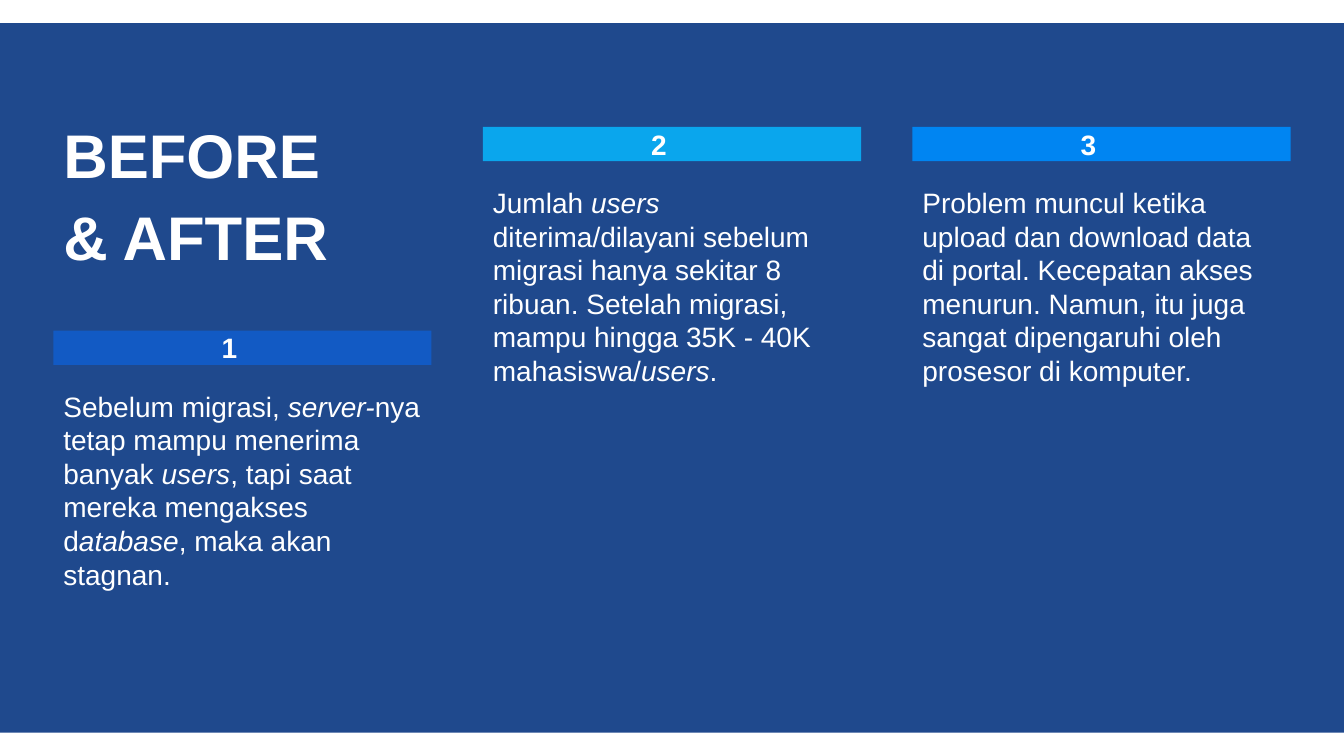
from lxml import etree
from pptx import Presentation
from pptx.dml.color import RGBColor
from pptx.enum import shapes, text
from pptx.oxml import ns
from pptx.util import Inches, Pt

COLORS = {
    "backdrop": "00307E",
    "first": "125AC4",
    "second": "0AA6ED",
    "third": "0085F2",
    "text": "FFFFFF",
}
COLUMN_LEFT = 0.53
COLUMN_STEP = 4.26
COLUMN_WIDTH = 3.75
COLUMNS = [
    ("first", 3.28, [
        ("Sebelum migrasi, ", False),
        ("server-", True),
        ("nya tetap mampu menerima banyak ", False),
        ("users", True),
        (", tapi saat mereka mengakses d", False),
        ("atabase", True),
        (", maka akan stagnan.", False),
    ]),
    ("second", 1.26, [
        ("Jumlah ", False),
        ("users ", True),
        ("diterima/dilayani sebelum migrasi hanya sekitar 8 ribuan. "
         "Setelah migrasi, mampu hingga 35K - 40K mahasiswa/", False),
        ("users", True),
        (".", False),
    ]),
    ("third", 1.26, [
        ("Problem muncul ketika upload dan download data di portal. "
         "Kecepatan akses menurun. Namun, itu juga sangat dipengaruhi "
         "oleh prosesor di komputer.", False),
    ]),
]


def add_bar(parent, left, top, width, height, color):
    """Add a plain filled rectangle."""
    bar = parent.add_shape(shapes.MSO_SHAPE.RECTANGLE, Inches(left),
                           Inches(top), Inches(width), Inches(height))
    bar.shadow.inherit = False
    bar.fill.solid()
    bar.fill.fore_color.rgb = RGBColor.from_string(COLORS[color])
    bar.line.fill.background()
    return bar


def set_opacity(bar, percent):
    """Make a solid fill partly transparent."""
    color = bar.fill._xPr.find(ns.qn("a:solidFill"))[0]
    etree.SubElement(color, ns.qn("a:alpha"), val=str(percent * 1000))


def add_text(parent, left, top, width, height, runs, size=20, bold=False,
             anchor=text.MSO_ANCHOR.TOP, align=text.PP_ALIGN.LEFT):
    """Add a wrapped text box of (wording, italic) runs and return its paragraph."""
    box = parent.add_textbox(Inches(left), Inches(top), Inches(width), Inches(height))
    frame = box.text_frame
    frame.word_wrap = True
    frame.vertical_anchor = anchor
    paragraph = frame.paragraphs[0]
    paragraph.alignment = align
    font = paragraph.font
    font.name, font.size, font.bold = "Arial", Pt(size), bold
    font.color.rgb = RGBColor.from_string(COLORS["text"])
    for wording, italic in runs:
        run = paragraph.add_run()
        run.text = wording
        if italic:
            run.font.italic = True
    return paragraph


def add_column(slide, number, color, top, runs):
    """Add a grouped numbered bar with its description below."""
    left = COLUMN_LEFT + (number - 1) * COLUMN_STEP
    parent = slide.shapes.add_group_shape().shapes
    add_bar(parent, left, top, COLUMN_WIDTH, 0.34, color)
    add_text(parent, left + 0.16, top - 0.05, 3.17, 0.44, [(str(number), False)],
             bold=True, anchor=text.MSO_ANCHOR.MIDDLE, align=text.PP_ALIGN.CENTER)
    add_text(parent, left, top + 0.53, COLUMN_WIDTH, 2.12, runs)


def main():
    """Build and save the slide."""
    deck = Presentation()
    deck.slide_width, deck.slide_height = Inches(13.33), Inches(7.5)
    slide = deck.slides.add_slide(deck.slide_layouts[6])
    backdrop = add_bar(slide.shapes, 0, 0.23, 13.33, 7.04, "backdrop")
    set_opacity(backdrop, 88)
    title = add_text(slide.shapes, COLUMN_LEFT, 1.09, 3.04, 1.61,
                     [("BEFORE & AFTER", False)], size=44, bold=True,
                     anchor=text.MSO_ANCHOR.MIDDLE)
    title.line_spacing = 1.1
    title.space_before = Pt(9)
    for number, (color, top, runs) in enumerate(COLUMNS, start=1):
        add_column(slide, number, color, top, runs)
    deck.save("out.pptx")


if __name__ == "__main__":
    main()
